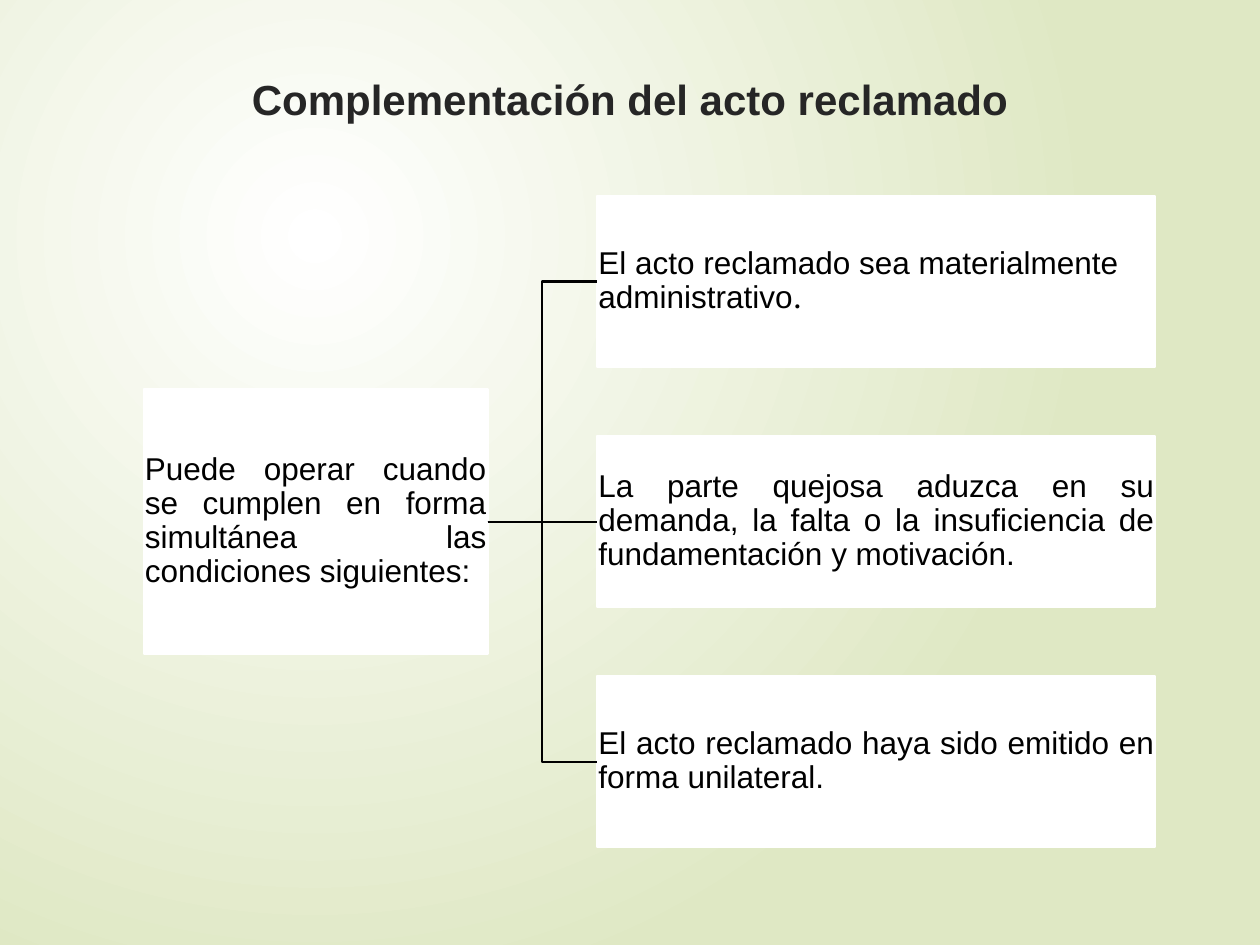
from dataclasses import dataclass

from lxml.etree import SubElement
from pptx import Presentation
from pptx.dml.color import RGBColor
from pptx.enum.shapes import MSO_CONNECTOR, MSO_SHAPE
from pptx.enum.text import MSO_ANCHOR, PP_ALIGN
from pptx.oxml.ns import qn
from pptx.shapes.autoshape import Shape
from pptx.slide import Slide
from pptx.util import Inches, Pt

COLORS = {"title": "262626", "ink": "000000", "box": "FFFFFF",
          "glow": "FFFFFF", "edge": "DFE8C4"}
LINE_WIDTH = Pt(1.25)
MIDDLE_Y, ROW_STEP = 4.14, 1.905
RIGHT, LEFT = 3, 1  # connection sites of a rectangle
BOX_FORMAT = {"word_wrap": True, "vertical_anchor": MSO_ANCHOR.MIDDLE,
              "margin_left": Inches(0.01), "margin_right": Inches(0.01),
              "margin_top": Inches(0.01), "margin_bottom": Inches(0.01)}


@dataclass(frozen=True)
class Column:
    left: float
    width: float
    height: float


@dataclass(frozen=True)
class Box:
    column: Column
    row: int  # rows above (-) or below (+) the middle of the tree
    runs: tuple[tuple[str, str], ...]  # wording and font
    align: PP_ALIGN = PP_ALIGN.JUSTIFY


PREMISE = Column(1.14, 2.73, 2.1)
CONDITION = Column(4.74, 4.43, 1.36)

ROOT = Box(PREMISE, 0, (
    ("Puede operar cuando se cumplen en forma simultánea las condiciones siguientes:", "Arial"),))
CONDITIONS = (
    Box(CONDITION, -1, (("El acto reclamado sea materialmente administrativo", "Arial"),
                        (".", "League Spartan")), PP_ALIGN.LEFT),
    Box(CONDITION, 0, (("La parte quejosa aduzca en su demanda, la falta o la insuficiencia "
                        "de fundamentación y motivación.", "Arial"),)),
    Box(CONDITION, 1, (("El acto reclamado haya sido emitido en forma unilateral.", "Arial"),)),
)


def rgb(name: str) -> RGBColor:
    return RGBColor.from_string(COLORS[name])


def apply_format(target: object, values: dict) -> None:
    for name, value in values.items():
        setattr(target, name, value)


def paint_background(slide: Slide) -> None:
    """Fill with a circular gradient centred in the upper left quarter."""
    fill = slide.background.fill
    fill.gradient()
    for stop, position, name in zip(fill.gradient_stops, (0, 1), ("glow", "edge")):
        stop.color.rgb = rgb(name)
        stop.position = position
    gradient = slide.element.find(".//" + qn("a:gradFill"))
    gradient.remove(gradient.find(qn("a:lin")))
    circle = SubElement(gradient, qn("a:path"), {"path": "circle"})
    SubElement(circle, qn("a:fillToRect"),
               {"l": "50000", "t": "50000", "r": "100000", "b": "100000"})


def set_title(slide: Slide, wording: str) -> None:
    title = slide.shapes.title
    apply_format(title, {"left": Inches(0.5), "top": Inches(0.34),
                         "width": Inches(9), "height": Inches(0.88)})
    title.text_frame.text = wording
    title.text_frame.vertical_anchor = MSO_ANCHOR.MIDDLE
    paragraph = title.text_frame.paragraphs[0]
    paragraph.alignment = PP_ALIGN.CENTER
    apply_format(paragraph.runs[0].font, {"name": "Arial", "size": Pt(24), "bold": True})
    paragraph.runs[0].font.color.rgb = rgb("title")


def draw_box(slide: Slide, box: Box) -> Shape:
    column = box.column
    top = MIDDLE_Y + box.row * ROW_STEP - column.height / 2
    shape = slide.shapes.add_shape(MSO_SHAPE.RECTANGLE, *map(
        Inches, (column.left, top, column.width, column.height)))
    shape.shadow.inherit = False
    shape.fill.solid()
    shape.fill.fore_color.rgb = rgb("box")
    shape.line.color.rgb = rgb("box")
    shape.line.width = LINE_WIDTH
    apply_format(shape.text_frame, BOX_FORMAT)
    paragraph = shape.text_frame.paragraphs[0]
    apply_format(paragraph, {"alignment": box.align, "line_spacing": 0.9})
    for wording, font_name in box.runs:
        run = paragraph.add_run()
        run.text = wording
        apply_format(run.font, {"name": font_name, "size": Pt(18)})
        run.font.color.rgb = rgb("ink")
    return shape


def join(slide: Slide, source: Shape, target: Shape, kind: MSO_CONNECTOR) -> None:
    connector = slide.shapes.add_connector(kind, 0, 0, 0, 0)
    connector.begin_connect(source, RIGHT)
    connector.end_connect(target, LEFT)
    connector.line.color.rgb = rgb("ink")
    connector.line.width = LINE_WIDTH
    SubElement(connector.element.spPr, qn("a:effectLst"))


def main() -> None:
    deck = Presentation()
    deck.slide_width, deck.slide_height = Inches(10), Inches(7.5)
    slide = deck.slides.add_slide(deck.slide_layouts.get_by_name("Title Only"))
    paint_background(slide)
    set_title(slide, "Complementación del acto reclamado")
    premise = draw_box(slide, ROOT)
    for box in CONDITIONS:
        kind = MSO_CONNECTOR.ELBOW if box.row else MSO_CONNECTOR.STRAIGHT
        join(slide, premise, draw_box(slide, box), kind)
    deck.save("out.pptx")


if __name__ == "__main__":
    main()
